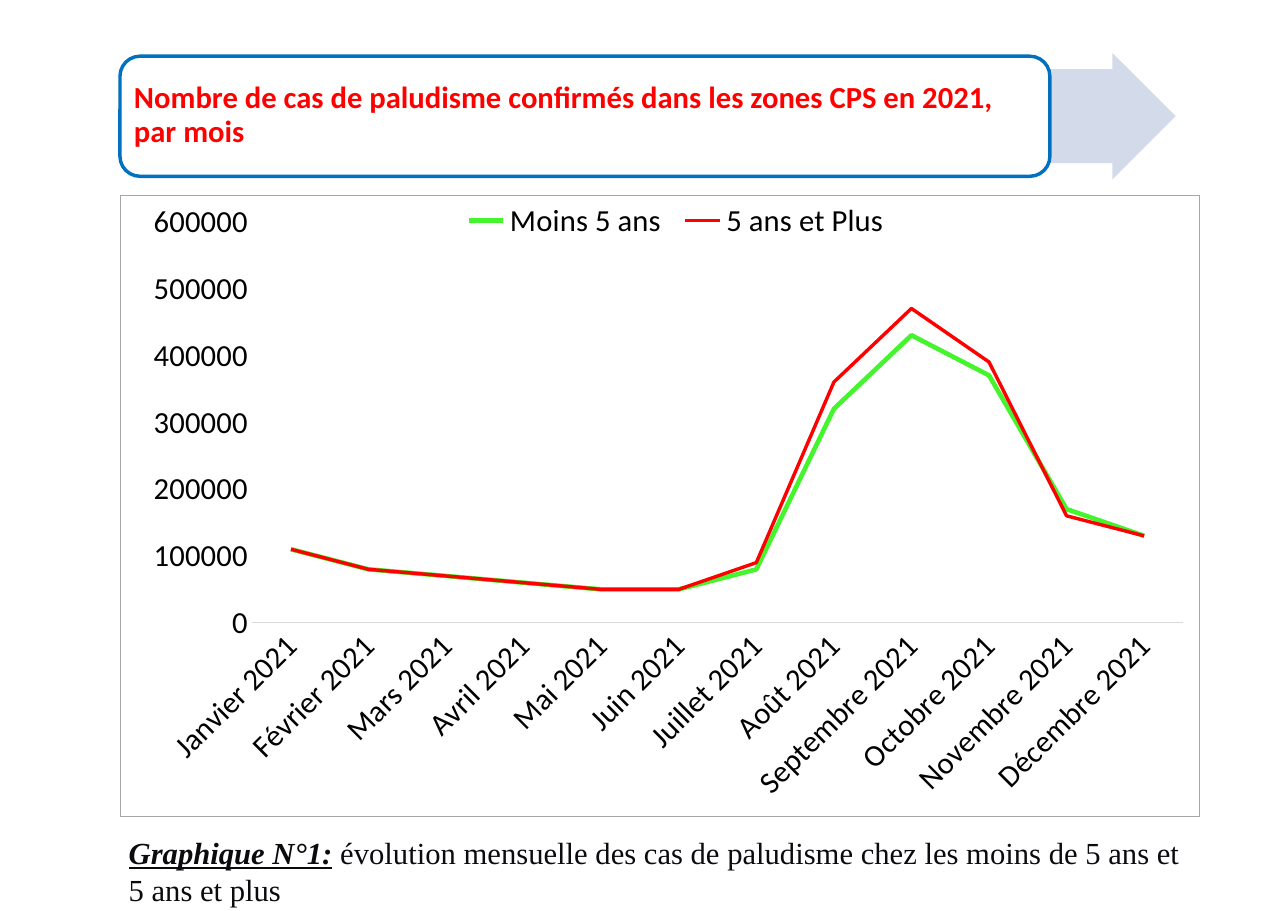
from lxml.etree import SubElement
from pptx import Presentation
from pptx.chart.data import CategoryChartData
from pptx.dml.color import RGBColor
from pptx.enum.chart import XL_CHART_TYPE as ChartType, XL_LEGEND_POSITION as LegendPosition
from pptx.enum.chart import XL_TICK_MARK as TickMark
from pptx.enum.shapes import MSO_SHAPE as Shape
from pptx.enum.text import MSO_ANCHOR as Anchor, MSO_AUTO_SIZE as AutoSize, PP_ALIGN as Align
from pptx.oxml import parse_xml
from pptx.oxml.ns import nsdecls, qn
from pptx.util import Inches, Pt


class Theme:
    heading = RGBColor(0xFF, 0x00, 0x00)
    frame = RGBColor(0x00, 0x70, 0xBF)
    arrow = RGBColor(0xCF, 0xD8, 0xE8)
    paper = RGBColor(0xFF, 0xFF, 0xFF)
    ink = RGBColor(0x00, 0x00, 0x00)
    caption = RGBColor(0x0B, 0x0B, 0x0F)
    axis = RGBColor(0xD9, 0xD9, 0xD9)
    under_five = RGBColor(0x44, 0xF4, 0x2C)
    five_and_over = RGBColor(0xFF, 0x00, 0x00)
    sans, serif = "Calibri", "Times New Roman"
    size = Pt(20)


presentation = Presentation()
presentation.slide_width, presentation.slide_height = Inches(11.69), Inches(8.27)
slide = presentation.slides.add_slide(presentation.slide_layouts[5])


def area(left, top, width, height):
    """Turn percentages of the slide into a position and a size."""
    across, down = presentation.slide_width / 100, presentation.slide_height / 100
    return int(left * across), int(top * down), int(width * across), int(height * down)


def set_layout(part, index, x, y, width, height, target=""):
    """Place a chart part by shares of the chart area, replacing its old layout."""
    for layout in part.findall(qn("c:layout")):
        part.remove(layout)
    values = dict(xMode="edge", yMode="edge", x=x, y=y, w=width, h=height)
    items = "".join(f'<c:{name} val="{value}"/>' for name, value in values.items())
    part.insert(index, parse_xml(f'<c:layout {nsdecls("c")}><c:manualLayout>{target}{items}'
                                 '</c:manualLayout></c:layout>'))


# Arrow behind the heading
arrow = slide.shapes.add_shape(Shape.RIGHT_ARROW, *area(81.44, 5.8, 9.84, 13.91))
arrow.adjustments[0], arrow.adjustments[1] = 0.74, 0.5
arrow.shadow.inherit = False
arrow.fill.solid()
arrow.fill.fore_color.rgb = Theme.arrow
arrow.line.fill.background()
arrow_color = arrow.fill._xPr.find(f".//{qn('a:srgbClr')}")
SubElement(arrow_color, qn("a:alpha"), val="90000")

# Heading frame
frame = slide.shapes.add_shape(Shape.ROUNDED_RECTANGLE, *area(9.32, 6.17, 72.2, 13.18))
frame.shadow.inherit = False
frame.fill.solid()
frame.fill.fore_color.rgb = Theme.paper
frame.line.color.rgb = Theme.frame
frame.line.width = Pt(2.25)

# Heading, brought in front of its frame
title = slide.shapes.title
title.left, title.top, title.width, title.height = area(10.4, 8.25, 67.66, 7.98)
slide.shapes._spTree.append(title._element)
text_frame = title.text_frame
text_frame.text = "Nombre de cas de paludisme confirmés dans les zones CPS en 2021, par mois"
text_frame.word_wrap = True
text_frame.auto_size = AutoSize.NONE
text_frame.vertical_anchor = Anchor.TOP
text_frame.margin_left = text_frame.margin_right = text_frame.margin_bottom = 0
text_frame.margin_top = Inches(0.05)
paragraph = text_frame.paragraphs[0]
paragraph.alignment = Align.LEFT
paragraph.line_spacing, paragraph.space_before = Pt(22.1), Pt(3.4)
paragraph.font.name, paragraph.font.size = Theme.sans, Theme.size
paragraph.font.bold = True
paragraph.font.color.rgb = Theme.heading

# Monthly cases
months = ["Janvier", "Février", "Mars", "Avril", "Mai", "Juin", "Juillet", "Août",
          "Septembre", "Octobre", "Novembre", "Décembre"]
age_groups = [
    ("Moins 5 ans", Theme.under_five, 3,
     [110000, 80000, 70000, 60000, 50000, 50000,
      80000, 320000, 430000, 370000, 170000, 130000]),
    ("5 ans et Plus", Theme.five_and_over, 2.25,
     [110000, 80000, 70000, 60000, 50000, 50000,
      90000, 360000, 470000, 390000, 160000, 130000]),
]
chart_data = CategoryChartData()
chart_data.categories = [f"{month} 2021" for month in months]
for name, color, width, cases in age_groups:
    chart_data.add_series(name, cases)
chart = slide.shapes.add_chart(
    ChartType.LINE, *area(9.32, 21.4, 83.83, 68.32), chart_data).chart
chart.has_title = False
chart.font.name, chart.font.size = Theme.sans, Theme.size
chart.font.color.rgb = Theme.ink
chart.plots[0].vary_by_categories = False
for series, (name, color, width, cases) in zip(chart.plots[0].series, age_groups):
    series.smooth = False
    series.format.line.color.rgb = color
    series.format.line.width = Pt(width)

# Axes
month_axis, case_axis = chart.category_axis, chart.value_axis
for axis in (month_axis, case_axis):
    axis.has_major_gridlines = False
    axis.major_tick_mark = axis.minor_tick_mark = TickMark.NONE
    axis.tick_labels.font.size = Theme.size
month_axis.format.line.color.rgb = Theme.axis
month_axis.format.line.width = Pt(0.75)
month_axis._element.find(f".//{qn('a:bodyPr')}").set("rot", "-2700000")
case_axis.format.line.fill.background()
case_axis.minimum_scale, case_axis.maximum_scale, case_axis.major_unit = 0, 600000, 100000
case_axis.tick_labels.number_format = "0"
case_axis.tick_labels.number_format_is_linked = False

# Legend above the lines, plot layout and chart border
chart.has_legend = True
chart.legend.position = LegendPosition.BOTTOM
chart.legend.include_in_layout = False
set_layout(chart.legend._element, 1, 0.31, 0.01, 0.41, 0.06)
set_layout(chart._chartSpace.chart.plotArea, 0, 0.122, 0.042, 0.863, 0.646,
           '<c:layoutTarget val="inner"/>')
chart._chartSpace.chart.addnext(parse_xml(
    f'<c:spPr {nsdecls("c", "a")}><a:noFill/><a:ln w="9525"><a:solidFill>'
    '<a:srgbClr val="A6A6A6"/></a:solidFill></a:ln></c:spPr>'))

# Caption
caption = slide.shapes.add_textbox(*area(9.15, 90.93, 83.92, 6.53))
caption.text_frame.word_wrap = True
paragraph = caption.text_frame.paragraphs[0]
paragraph.space_before = Pt(4)
paragraph.font.name, paragraph.font.size = Theme.serif, Theme.size
paragraph.font.color.rgb = Theme.caption
label = paragraph.add_run()
label.text = "Graphique N°1:"
label.font.bold = label.font.italic = label.font.underline = True
description = paragraph.add_run()
description.text = (" évolution mensuelle des cas de paludisme chez les moins de 5 ans "
                    "et 5 ans et plus")

presentation.save("out.pptx")
